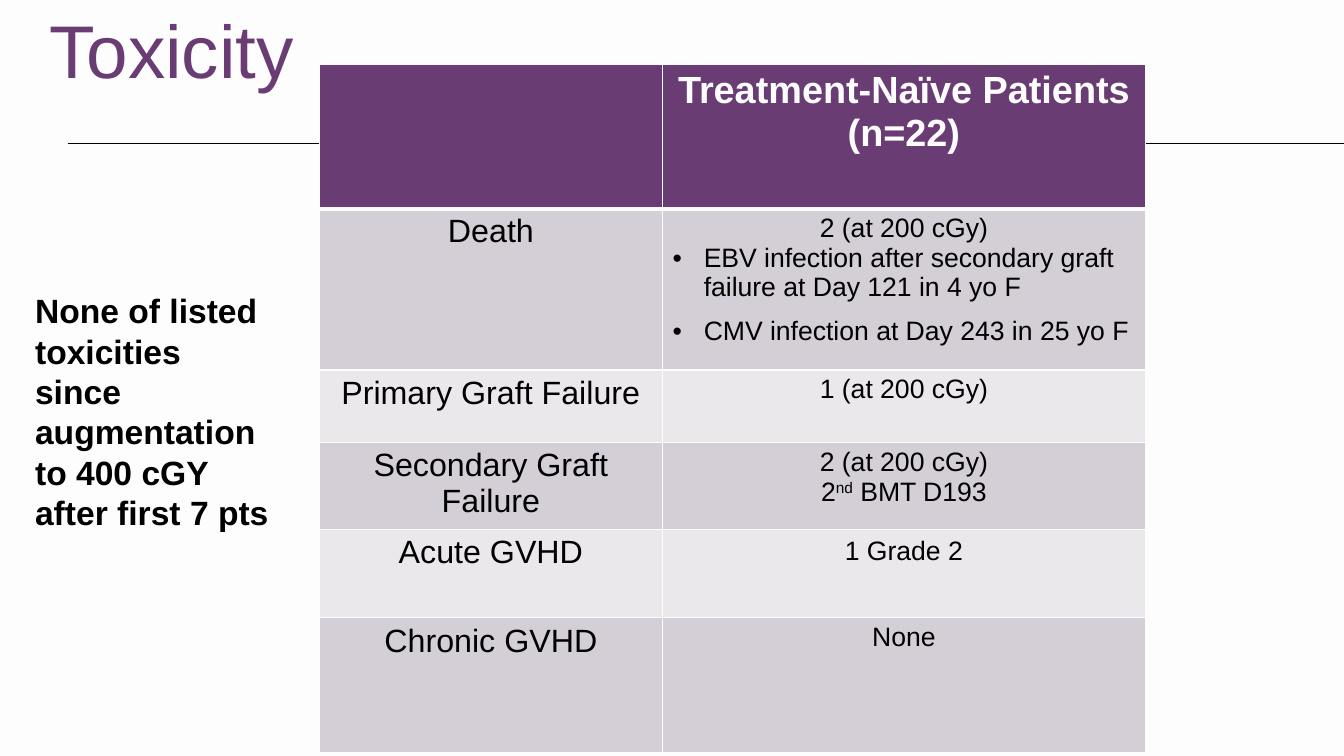
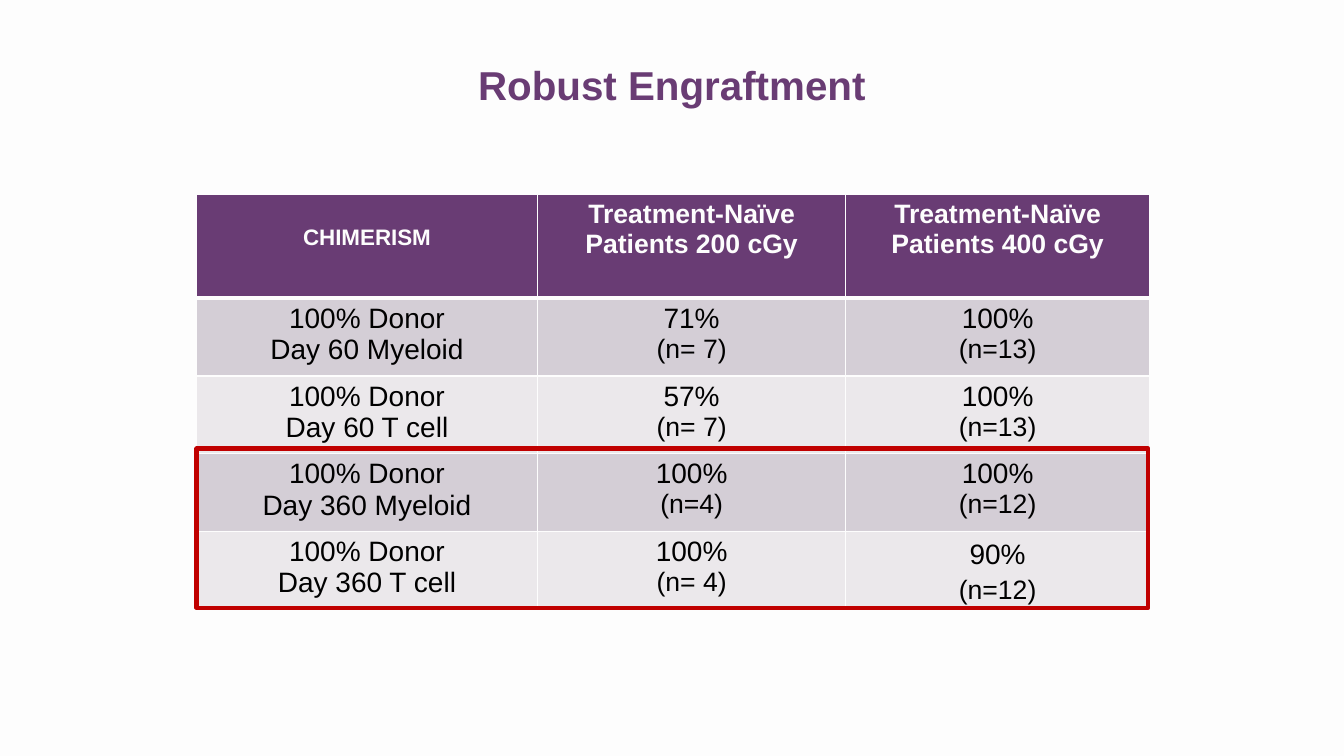
from dataclasses import dataclass

import lxml.etree
import pptx
import pptx.dml.color
import pptx.enum.shapes
import pptx.enum.text
import pptx.oxml
import pptx.oxml.ns
import pptx.util

Inches = pptx.util.Inches
Pt = pptx.util.Pt
RGB = pptx.dml.color.RGBColor.from_string
qn = pptx.oxml.ns.qn
ALIGN = pptx.enum.text.PP_ALIGN
ANCHOR = pptx.enum.text.MSO_ANCHOR


@dataclass(frozen=True)
class Theme:
    font: str = "Arial"
    paper: str = "FDFDFD"
    ink: str = "000000"
    purple: str = "693C74"
    dark_band: str = "D4CED6"
    light_band: str = "EBE8EB"
    highlight: str = "C00000"
    large_title: float = 53.3
    small_title: float = 28.8
    note: float = 24
    wide_header: float = 27
    header: float = 19
    corner_header: float = 16
    toxicity: float = 23
    chimerism: float = 20
    detail: float = 19


theme = Theme()


def add_run(paragraph, text, size, color=theme.ink, bold=False):
    run = paragraph.add_run()
    run.text = text
    run.font.name = theme.font
    run.font.size = Pt(size)
    run.font.bold = bold
    run.font.color.rgb = RGB(color)
    return run


def add_banded_table(slide, left, top, widths, heights, rows):
    """Each cell is a list of paragraphs, each a (text, size) pair."""
    table = slide.shapes.add_table(
        len(heights), len(widths), Inches(left), Inches(top),
        Inches(sum(widths)), Inches(sum(heights))).table
    for column, width in zip(table.columns, widths):
        column.width = Inches(width)
    for r, (row, height) in enumerate(zip(rows, heights)):
        table.rows[r].height = Inches(height)
        band = theme.dark_band if r % 2 else theme.light_band
        for c, paragraphs in enumerate(row):
            cell = table.cell(r, c)
            properties = cell._tc.get_or_add_tcPr()
            thick_side = {0: "lnB", 1: "lnT"}.get(r)
            for side in ("lnL", "lnR", "lnT", "lnB"):
                width = Pt(3 if side == thick_side else 1)
                border = lxml.etree.SubElement(properties, qn(f"a:{side}"), w=str(width))
                border_fill = lxml.etree.SubElement(border, qn("a:solidFill"))
                lxml.etree.SubElement(border_fill, qn("a:srgbClr"), val=theme.paper)
            cell.fill.solid()
            cell.fill.fore_color.rgb = RGB(band if r else theme.purple)
            frame = cell.text_frame
            for i, (text, size) in enumerate(paragraphs):
                paragraph = frame.add_paragraph() if i else frame.paragraphs[0]
                paragraph.alignment = ALIGN.CENTER
                add_run(paragraph, text, size, theme.ink if r else theme.paper, r == 0)
    return table


presentation = pptx.Presentation()
presentation.slide_width = Inches(13.33)
presentation.slide_height = Inches(7.5)
master = presentation.slide_master
master.background.fill.solid()
master.background.fill.fore_color.rgb = RGB(theme.paper)

# Titles: text, position, size, weight, alignment, bottom margin
titles = [
    ("Toxicity", (0.39, -0.27, 11.33, 1.25), theme.large_title, False, ALIGN.LEFT, 0.05),
    ("Robust Engraftment", (0, 0.43, 13.33, 1.25), theme.small_title, True, ALIGN.CENTER, 0.6),
]
for text, box, size, bold, alignment, bottom_margin in titles:
    slide = presentation.slides.add_slide(presentation.slide_layouts.get_by_name("Title Only"))
    title = slide.shapes.title
    title.left, title.top, title.width, title.height = map(Inches, box)
    title.fill.solid()
    title.fill.fore_color.rgb = RGB(theme.paper)
    frame = title.text_frame
    frame.auto_size = pptx.enum.text.MSO_AUTO_SIZE.NONE
    frame.vertical_anchor = ANCHOR.BOTTOM
    frame.margin_bottom = Inches(bottom_margin)
    frame.paragraphs[0].alignment = alignment
    add_run(frame.paragraphs[0], text, size, theme.purple, bold)
toxicity_slide, engraftment_slide = presentation.slides

# The rule under the titles belongs to the master
title_rule = toxicity_slide.shapes.add_connector(
    pptx.enum.shapes.MSO_CONNECTOR.STRAIGHT,
    Inches(0.67), Inches(1.42), Inches(13.33), Inches(1.42))
title_rule.line.color.rgb = RGB(theme.ink)
title_rule.line.width = Pt(0.75)
lxml.etree.SubElement(title_rule.element.spPr, qn("a:effectLst"))
master.shapes.element.append(title_rule.element)

# Toxicity
toxicities = [
    ("Death", ["2 (at 200 cGy)",
               "EBV infection after secondary graft failure at Day 121 in 4 yo F",
               "CMV infection at Day 243 in 25 yo F"]),
    ("Primary Graft Failure", ["1 (at 200 cGy)"]),
    ("Secondary Graft Failure", ["2 (at 200 cGy)", "2"]),
    ("Acute GVHD", ["1 Grade 2"]),
    ("Chronic GVHD", ["None"]),
]
toxicity_rows = [[[], [("Treatment-Naïve Patients", theme.wide_header),
                       ("(n=22)", theme.wide_header)]]]
for toxicity, details in toxicities:
    toxicity_rows.append([[(toxicity, theme.toxicity)],
                          [(detail, theme.detail) for detail in details]])
toxicity_table = add_banded_table(
    toxicity_slide, 3.17, 0.64, [3.4, 4.79],
    [1.43, 1.6, 0.72, 0.86, 0.88, 1.34], toxicity_rows)

infections = toxicity_table.cell(1, 1).text_frame.paragraphs[1:]
for infection in infections:
    infection.alignment = ALIGN.LEFT
    properties = infection._p.get_or_add_pPr()
    properties.set("marL", str(Inches(0.31)))
    properties.set("indent", str(-Inches(0.31)))
    lxml.etree.SubElement(properties, qn("a:buFont"), typeface=theme.font)
    lxml.etree.SubElement(properties, qn("a:buChar"), char="•")
infections[-1].space_before = Pt(10)

second_transplant = toxicity_table.cell(3, 1).text_frame.paragraphs[1]
ordinal = add_run(second_transplant, "nd", theme.detail)
ordinal._r.get_or_add_rPr().set("baseline", "30000")
add_run(second_transplant, " BMT D193", theme.detail)
toxicity_table.cell(4, 1).margin_top = Inches(0.07)

dose_note = toxicity_slide.shapes.add_textbox(
    Inches(0.25), Inches(2.83), Inches(2.54), Inches(2.52)).text_frame
dose_note.word_wrap = True
add_run(dose_note.paragraphs[0],
        "None of listed toxicities since augmentation to 400 cGY after first 7 pts",
        theme.note, bold=True)

# Engraftment
chimerism = [
    ("Day 60 Myeloid", ("71%", "(n= 7)"), ("100%", "(n=13)")),
    ("Day 60 T cell", ("57%", "(n= 7)"), ("100%", "(n=13)")),
    ("Day 360 Myeloid", ("100%", "(n=4)"), ("100%", "(n=12)")),
    ("Day 360 T cell", ("100%", "(n= 4)"), ("90%", "(n=12)")),
]
chimerism_rows = [[[("CHIMERISM", theme.corner_header)],
                   [("Treatment-Naïve Patients 200 cGy", theme.header)],
                   [("Treatment-Naïve Patients 400 cGy", theme.header)]]]
for measure, *doses in chimerism:
    label = [("100% Donor", theme.chimerism), (measure, theme.chimerism)]
    chimerism_rows.append([label] + [
        [(share, theme.chimerism), (count, theme.detail)] for share, count in doses])
chimerism_table = add_banded_table(
    engraftment_slide, 1.95, 1.93, [3.38, 3.06, 3.01], [1.03] + [0.77] * 4, chimerism_rows)
chimerism_table.cell(0, 0).margin_top = Inches(0.31)

last_result = chimerism_table.cell(4, 2)
last_result.vertical_anchor = ANCHOR.MIDDLE
last_result.margin_left = last_result.margin_right = Inches(0.04)
last_result.margin_top = last_result.margin_bottom = 0
for paragraph in last_result.text_frame.paragraphs:
    paragraph.line_spacing = 1.15

day_360_frame = engraftment_slide.shapes.add_shape(
    pptx.enum.shapes.MSO_SHAPE.RECTANGLE,
    Inches(1.95), Inches(4.45), Inches(9.44), Inches(1.58))
day_360_frame.shadow.inherit = False
day_360_frame.fill.background()
day_360_frame.line.color.rgb = RGB(theme.highlight)
day_360_frame.line.width = Pt(3)

presentation.save("out.pptx")
